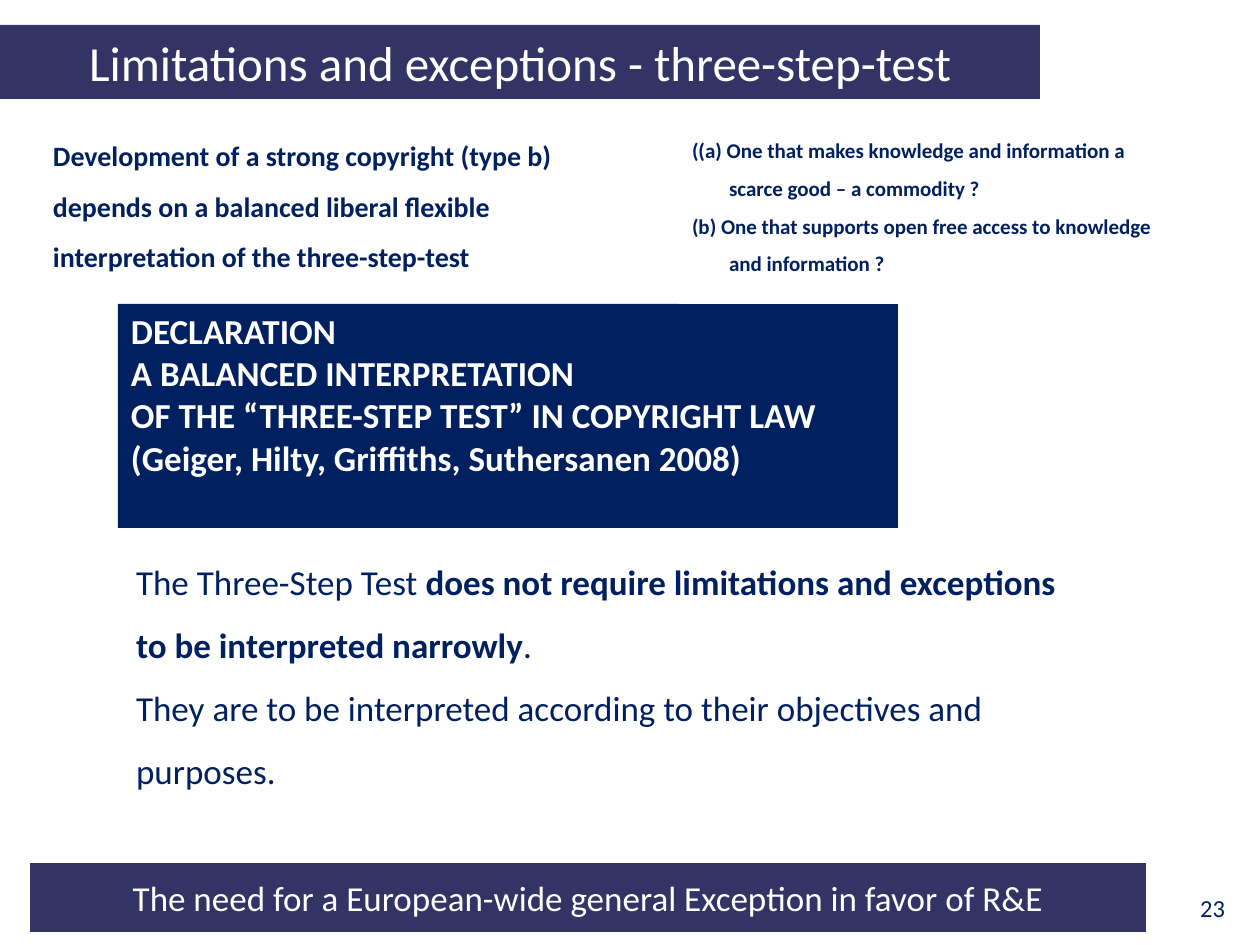
from pptx import Presentation
from pptx.dml.color import RGBColor
from pptx.enum.shapes import MSO_SHAPE
from pptx.enum.text import MSO_ANCHOR, PP_ALIGN
from pptx.util import Emu, Pt

RECT = MSO_SHAPE.RECTANGLE
TOP, MID = MSO_ANCHOR.TOP, MSO_ANCHOR.MIDDLE
LEFT, MIDDLE, RIGHT = PP_ALIGN.LEFT, PP_ALIGN.CENTER, PP_ALIGN.RIGHT
SCALE = 914400 / 126
COLORS = {"band": "333366", "navy": "002060", "white": "FFFFFF"}


def px(n):
    return Emu(round(n * SCALE))


def color(name):
    return RGBColor.from_string(COLORS[name])


class Deck:
    font = "Calibri"

    def __init__(self, wide, high):
        self.prs = Presentation()
        self.prs.slide_width, self.prs.slide_height = px(wide), px(high)
        self.slide = self.prs.slides.add_slide(self.prs.slide_layouts[6])

    def fill_text(self, shape, paras, size, ink="navy", bold=False, align=LEFT,
                  anchor=TOP, pads=(13, 6, 13, 6), lead=1.0, hang=0):
        frame = shape.text_frame
        frame.word_wrap = True
        frame.vertical_anchor = anchor
        (frame.margin_left, frame.margin_top,
         frame.margin_right, frame.margin_bottom) = map(px, pads)
        for i, parts in enumerate(paras):
            para = frame.paragraphs[0] if i == 0 else frame.add_paragraph()
            para.alignment, para.line_spacing = align, lead
            if hang:
                props = para._p.get_or_add_pPr()
                props.set("marL", str(px(hang)))
                props.set("indent", str(-px(hang)))
            if isinstance(parts, str):
                parts = [(parts, bold)]
            for text, heavy in parts:
                run = para.add_run()
                run.text = text
                run.font.name, run.font.size = self.font, Pt(size)
                run.font.bold = heavy
                run.font.color.rgb = color(ink)

    def box(self, place, fill, paras, size, **style):
        shape = self.slide.shapes.add_shape(RECT, *map(px, place))
        shape.shadow.inherit = False
        shape.fill.solid()
        shape.fill.fore_color.rgb = color(fill)
        shape.line.fill.background()
        self.fill_text(shape, paras, size, **style)

    def band(self, place, text, size):
        self.box(place, "band", [text], size, ink="white", align=MIDDLE,
                 anchor=MID, pads=(0, 0, 0, 0))

    def text(self, place, paras, size, **style):
        shape = self.slide.shapes.add_textbox(*map(px, place))
        self.fill_text(shape, paras, size, **style)


def main():
    deck = Deck(1260, 945)
    deck.band((30, 863, 1116, 69),
              "The need for a European-wide general Exception in favor of R&E", 20)
    deck.text((1139, 893, 86, 36), ["23"], 14, align=RIGHT, pads=(0, 0, 0, 0))
    deck.box((118, 304, 780, 224), "navy", [
        "DECLARATION",
        "A BALANCED INTERPRETATION",
        "OF THE “THREE-STEP TEST” IN COPYRIGHT LAW",
        "(Geiger, Hilty, Griffiths, Suthersanen 2008)",
    ], 20, ink="white", bold=True)
    deck.text((123, 534, 974, 265), [
        [("The Three-Step Test ", False),
         ("does not require limitations and exceptions to be interpreted narrowly", True),
         (".", False)],
        "They are to be interpreted according to their objectives and purposes.",
    ], 20, lead=1.5)
    deck.band((0, 25, 1040, 74), "Limitations and exceptions - three-step-test", 28)
    deck.box((679, 135, 496, 169), "white", [
        "((a) One that makes knowledge and information a scarce good – a commodity ?",
        "(b) One that supports open free access to knowledge and information ?",
    ], 12, bold=True, anchor=MID, pads=(13, 0, 13, 38), lead=1.5, hang=37)
    deck.text((40, 116, 536, 168), [
        "Development of a strong copyright (type b) depends on a balanced "
        "liberal flexible interpretation of the three-step-test",
    ], 16, bold=True, lead=1.5)
    deck.prs.save("out.pptx")


if __name__ == "__main__":
    main()
